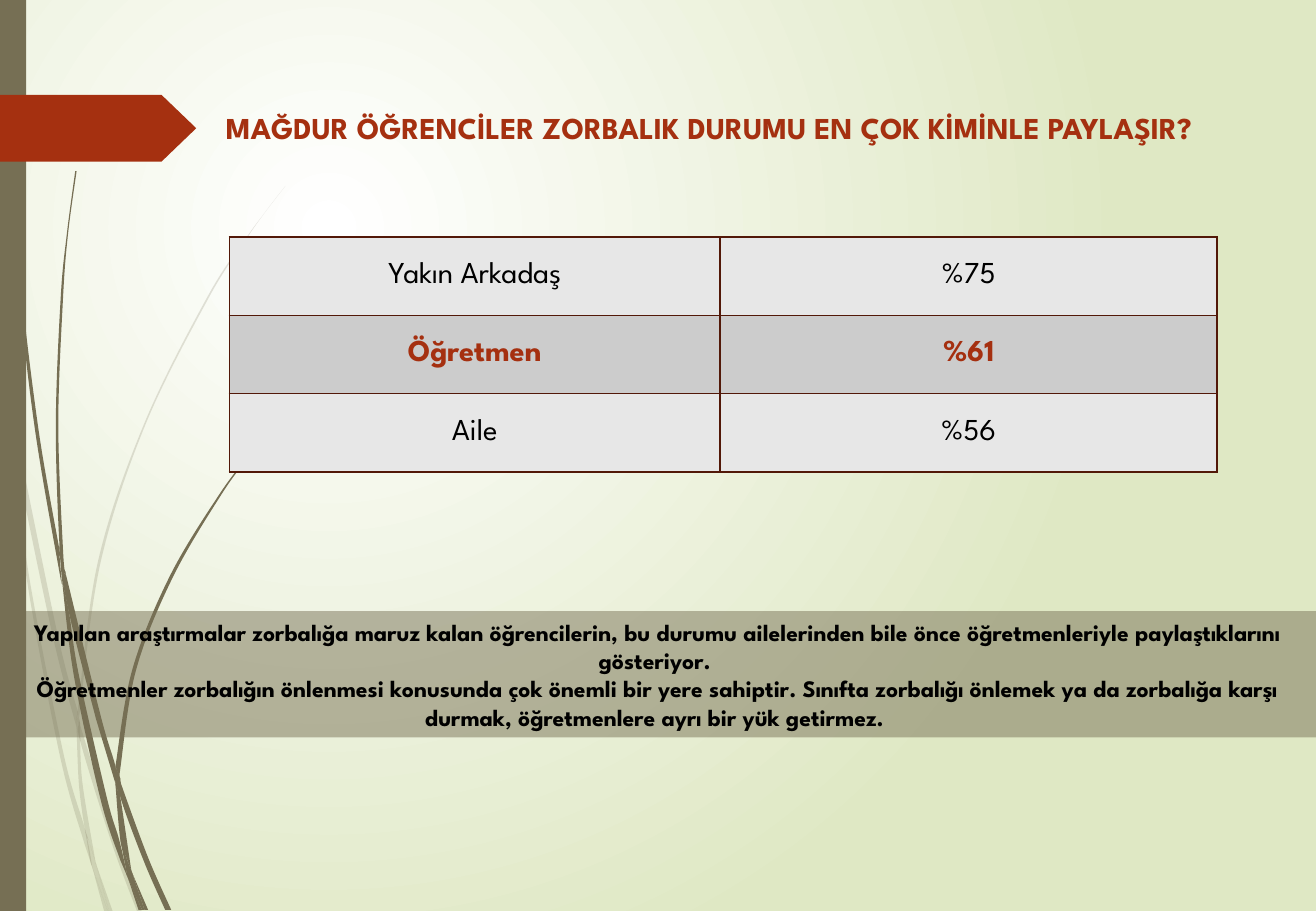
import pptx
import pptx.dml.color
import pptx.enum.shapes
import pptx.enum.text
import pptx.oxml
import pptx.oxml.ns
import pptx.util

Pt = pptx.util.Pt
qn = pptx.oxml.ns.qn
SPACE = pptx.oxml.ns.nsdecls("a")
FONT = "League Spartan"
RED, OLIVE, BLACK = "A53010", "766F54", "000000"
EDGE, LIGHT, DARK = "521808", "E7E7E7", "CCCCCC"
WIDE, HIGH = 780, 540

FAINT = [
    ([(5.8, 252), (4.3, 231.8), (0, 203)], [(0, 215.3), (5.8, 247.7), (5.8, 252)]),
    ([(7.9, 248.4), (33.8, 374.4), (46.1, 421.9)],
     [(45.4, 431.3), (31, 375.8), (9.4, 270.7), (7.9, 248.4)]),
    ([(47.5, 429.1), (49.7, 437), (69.1, 498.2), (84.2, 540.7)],
     [(81.4, 540.7), (66.2, 499.7), (47.5, 439.2), (47.5, 429.1)]),
    ([(56.9, 511.9), (67, 540.7)], [(64.8, 540.7), (56.9, 511.9)]),
    ([(5.8, 252), (9.4, 270.7), (16.6, 337.7), (37.4, 445.7), (50.4, 491.8), (54.7, 514.1)],
     [(49.7, 499), (35.3, 447.1), (15.1, 338.4), (5.8, 252)]),
    ([(45.4, 431.3), (47.5, 437.8), (47.5, 439.2), (49, 465.1), (56.2, 508.3), (56.9, 511.9)],
     [(52.6, 498.2), (50.4, 491.8), (46.8, 465.1), (45.4, 431.3)]),
    ([(169.2, 110.2), (157, 126), (145.4, 142.6), (123.8, 176.4), (86.4, 251.3),
      (59.8, 332.6), (47.5, 420.5), (47.5, 429.1)],
     [(46.1, 421.9), (46.1, 420.5), (58.3, 331.9), (85.7, 250.6), (123.1, 175.7),
      (145.4, 141.8), (157, 126), (169.2, 110.2)]),
    ([(54.7, 514.1), (64.1, 540.7)], [(61.9, 540.7), (54.7, 514.1)]),
    ([(46.1, 421.9), (47.5, 429.1)], [(47.5, 439.2), (47.5, 437.8), (45.4, 431.3)]),
    ([(50.4, 491.8), (52.6, 498.2), (56.9, 511.9), (64.8, 540.7)],
     [(64.1, 540.7), (54.7, 514.1), (53.3, 509), (50.4, 491.8)]),
]
SOLID = [
    ([(2.2, 0), (2.9, 34.6), (5, 78.5), (12.2, 167), (23, 255.6), (35.3, 326.2),
      (35.3, 329), (36.7, 346.3)],
     [(36, 343.4), (20.9, 255.6), (10.8, 167.8), (4.3, 79.2), (2.2, 34.6), (1.4, 0)]),
    ([(38.9, 339.8), (59.8, 424.8), (68.4, 454.3), (68.4, 464.4)],
     [(56.9, 426.2), (41, 363.6), (38.9, 339.8)]),
    ([(71.3, 461.5), (72.7, 467.3), (87.8, 508.3), (101.5, 539.3)],
     [(97.9, 539.3), (85, 509.8), (71.3, 472.3), (71.3, 461.5)]),
    ([(36.7, 343.4), (41, 363.6), (46.8, 400.3), (63.4, 473), (70.6, 497.5),
      (74.9, 516.2), (75.6, 519.8)],
     [(71.3, 509.8), (59.8, 474.5), (43.9, 401), (36.7, 343.4)]),
    ([(45.4, 101.5), (40.3, 139), (37.4, 176.4), (34.6, 251.3), (37.4, 326.2), (38.9, 339.8)],
     [(38.2, 339.8), (35.3, 323.3), (33.1, 251.3), (36, 176.4), (39.6, 139), (44.6, 101.5)]),
    ([(78.5, 517.7), (87.8, 539.3)], [(85.7, 539.3), (78.5, 517.7)]),
    ([(35.3, 323.3), (38.2, 339.8), (38.9, 339.8), (41, 363.6)],
     [(36.7, 343.4), (35.3, 326.2), (35.3, 323.3)]),
    ([(168.5, 247.7), (158.4, 258.5), (149, 269.3), (131.8, 292.3), (102.2, 342.7),
      (80.6, 397.4), (71.3, 455.8), (71.3, 461.5)],
     [(68.4, 454.3), (78.5, 396.7), (100.8, 341.3), (131, 291.6), (149, 268.6),
      (158.4, 257.8), (167.8, 247.7)]),
    ([(75.6, 519.8), (84.2, 539.3)], [(82.1, 539.3), (75.6, 519.8)]),
    ([(68.4, 464.4), (69.8, 468.7), (71.3, 472.3), (77.8, 515.5), (78.5, 517.7)],
     [(74.9, 508.3), (71.3, 497.5), (68.4, 464.4)]),
    ([(68.4, 454.3), (71.3, 461.5), (71.3, 472.3)],
     [(69.8, 468.7), (68.4, 464.4), (68.4, 454.3)]),
    ([(71.3, 497.5), (74.9, 508.3), (78.5, 517.7), (85.7, 539.3)],
     [(84.2, 539.3), (75.6, 519.8), (74.9, 516.2), (71.3, 497.5)]),
]


def hue(code):
    return pptx.dml.color.RGBColor.from_string(code)


def paint(shape, code, alpha=100):
    shape.shadow.inherit = False
    shape.line.fill.background()
    shape.fill.solid()
    shape.fill.fore_color.rgb = hue(code)
    if alpha < 100:
        tint = next(shape.element.spPr.iter(qn("a:srgbClr")))
        tint.append(pptx.oxml.parse_xml(f'<a:alpha {SPACE} val="{alpha * 1000}"/>'))


def write(frame, text, size, code, bold, align):
    frame.text = text
    frame.vertical_anchor = pptx.enum.text.MSO_ANCHOR.MIDDLE
    for para in frame.paragraphs:
        para.alignment = align
        for run in para.runs:
            run.font.name = FONT
            run.font.size = Pt(size)
            run.font.bold = bold
            run.font.color.rgb = hue(code)


def bend(knots):
    ends = [knots[0], *knots, knots[-1]]
    for a, b, c, d in zip(ends, ends[1:], ends[2:], ends[3:]):
        yield ([q + (r - p) / 6 for p, q, r in zip(a, b, c)],
               [r - (s - q) / 6 for q, r, s in zip(b, c, d)], c)


def add_leaf(slide, down, back, alpha):
    dots = [(Pt(x), Pt(y)) for x, y in down + back]
    pen = slide.shapes.build_freeform(*dots[0])
    pen.add_line_segments(dots[1:], close=True)
    shape = pen.convert_to_shape()
    paint(shape, OLIVE, alpha)
    curves = [*bend(down), None, *bend(back)]
    for line, curve in zip(list(shape.element.iter(qn("a:lnTo"))), curves):
        if curve:
            marks = "".join(f'<a:pt x="{Pt(x) - shape.left}" y="{Pt(y) - shape.top}"/>'
                            for x, y in curve)
            line.getparent().replace(line, pptx.oxml.parse_xml(
                f'<a:cubicBezTo {SPACE}>{marks}</a:cubicBezTo>'))


def add_block(slide, kind, box, code, alpha=100):
    shape = slide.shapes.add_shape(kind, *map(Pt, box))
    paint(shape, code, alpha)
    return shape


def set_ground(slide):
    fill = slide.background.fill
    fill.gradient()
    for stop, code in zip(fill.gradient_stops, ("FFFFFF", "DFE8C4")):
        stop.color.rgb = hue(code)
    line = next(slide.element.iter(qn("a:lin")))
    line.getparent().replace(line, pptx.oxml.parse_xml(
        f'<a:path {SPACE} path="circle">'
        '<a:fillToRect l="50000" t="50000" r="100000" b="100000"/></a:path>'))


def set_title(slide, text):
    title = slide.shapes.title
    title.left, title.top, title.width, title.height = map(Pt, (126.7, 61.2, 629.3, 29))
    write(title.text_frame, text, 18, RED, True, pptx.enum.text.PP_ALIGN.LEFT)
    title.text_frame.word_wrap = False


def add_edges(cell):
    for side in "LRTB":
        cell._tc.get_or_add_tcPr().append(pptx.oxml.parse_xml(
            f'<a:ln{side} {SPACE} w="{Pt(1)}"><a:solidFill>'
            f'<a:srgbClr val="{EDGE}"/></a:solidFill></a:ln{side}>'))


def add_grid(slide, rows, focus):
    box = map(Pt, (135.9, 140.6, 585.5, 139.2))
    table = slide.shapes.add_table(len(rows), 2, *box).table
    table.first_row = table.horz_banding = False
    for column, width in zip(table.columns, (291, 294.5)):
        column.width = Pt(width)
    for i, row in enumerate(rows):
        for j, text in enumerate(row):
            cell = table.cell(i, j)
            add_edges(cell)
            cell.fill.solid()
            cell.fill.fore_color.rgb = hue(DARK if i % 2 else LIGHT)
            cell.vertical_anchor = pptx.enum.text.MSO_ANCHOR.MIDDLE
            write(cell.text_frame, text, 18, RED if i == focus else BLACK,
                  i == focus, pptx.enum.text.PP_ALIGN.CENTER)


def main():
    deck = pptx.Presentation()
    deck.slide_width, deck.slide_height = Pt(WIDE), Pt(HIGH)
    slide = deck.slides.add_slide(deck.slide_layouts[5])
    kinds = pptx.enum.shapes.MSO_SHAPE
    set_ground(slide)
    for leaves, alpha in ((FAINT, 20), (SOLID, 100)):
        for down, back in leaves:
            add_leaf(slide, down, back, alpha)
    add_block(slide, kinds.RECTANGLE, (0, 0, 15.5, HIGH), OLIVE)
    arrow = add_block(slide, kinds.PENTAGON, (0, 56.2, 116.3, 39.6), RED)
    arrow.adjustments[0] = 0.52
    set_title(slide, "MAĞDUR ÖĞRENCİLER ZORBALIK DURUMU EN ÇOK KİMİNLE PAYLAŞIR?")
    add_grid(slide, [("Yakın Arkadaş", "%75"), ("Öğretmen", "%61"), ("Aile", "%56")], 1)
    band = add_block(slide, kinds.RECTANGLE, (0, 362.2, WIDE, 74.9), OLIVE, 49)
    write(band.text_frame,
          "Yapılan araştırmalar zorbalığa maruz kalan öğrencilerin, bu durumu ailelerinden "
          "bile önce öğretmenleriyle paylaştıklarını gösteriyor. \n"
          "Öğretmenler zorbalığın önlenmesi konusunda çok önemli bir yere sahiptir. Sınıfta "
          "zorbalığı önlemek ya da zorbalığa karşı durmak, öğretmenlere ayrı bir yük getirmez. ",
          14, BLACK, True, pptx.enum.text.PP_ALIGN.CENTER)
    deck.save("out.pptx")


if __name__ == "__main__":
    main()
